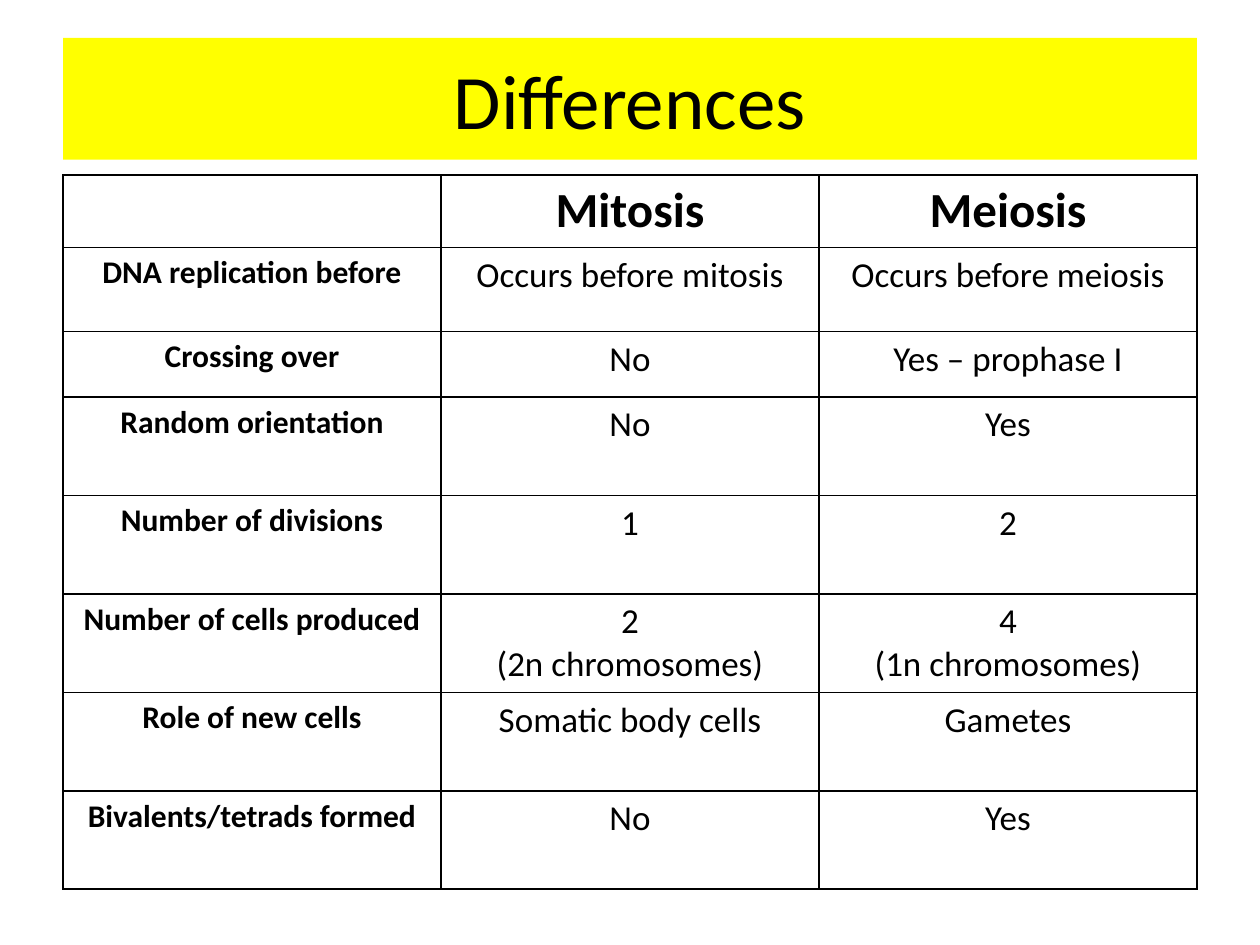
from lxml import etree
from pptx import Presentation
from pptx.dml.color import RGBColor
from pptx.enum.text import MSO_ANCHOR, PP_ALIGN
from pptx.oxml.ns import qn
from pptx.util import Pt

BLACK = RGBColor(0, 0, 0)
YELLOW = RGBColor(255, 255, 0)
FONT = "Calibri"
HEADING = {"size": Pt(28), "bold": True}
LABEL = {"size": Pt(18), "bold": True}
VALUE = {"size": Pt(20), "bold": False}

ROWS = [
    ("", "Mitosis", "Meiosis"),
    ("DNA replication before", "Occurs before mitosis", "Occurs before meiosis"),
    ("Crossing over", "No", "Yes – prophase I"),
    ("Random orientation", "No", "Yes"),
    ("Number of divisions", "1", "2"),
    ("Number of cells produced", "2\n(2n chromosomes)", "4\n(1n chromosomes)"),
    ("Role of new cells", "Somatic body cells", "Gametes"),
    ("Bivalents/tetrads formed", "No", "Yes"),
]
ROW_HEIGHTS = [37.5, 48, 37.5] + [56.25] * 5


def write_text(text_frame, text, font_format):
    """Fill a frame with centred paragraphs, one for each line of text."""
    text_frame.text = text
    for paragraph in text_frame.paragraphs:
        paragraph.alignment = PP_ALIGN.CENTER
        for run in paragraph.runs:
            for name, value in {"name": FONT, **font_format}.items():
                setattr(run.font, name, value)
            run.font.color.rgb = BLACK


def add_borders(cell):
    properties = cell._tc.get_or_add_tcPr()
    for index, side in enumerate(("lnL", "lnR", "lnT", "lnB")):
        line = etree.Element(qn(f"a:{side}"), w=str(Pt(1)))
        fill = etree.SubElement(line, qn("a:solidFill"))
        etree.SubElement(fill, qn("a:srgbClr"), val=str(BLACK))
        properties.insert(index, line)


def place_title(slide, left, top, width, height):
    title = slide.shapes.title
    box = {"left": left, "top": top, "width": width, "height": height}
    for name, value in box.items():
        setattr(title, name, Pt(value))
    title.fill.solid()
    title.fill.fore_color.rgb = YELLOW
    title.text_frame.vertical_anchor = MSO_ANCHOR.MIDDLE
    write_text(title.text_frame, "Differences", {"size": Pt(44), "bold": False})


def add_comparison_table(slide, left, top, width):
    column_count = len(ROWS[0])
    frame = slide.shapes.add_table(
        len(ROWS), column_count, Pt(left), Pt(top), Pt(width), Pt(sum(ROW_HEIGHTS)))
    table = frame.table
    table.first_row = table.horz_banding = False
    for column in table.columns:
        column.width = Pt(width / column_count)
    for row_index, (texts, height) in enumerate(zip(ROWS, ROW_HEIGHTS)):
        table.rows[row_index].height = Pt(height)
        for column_index, text in enumerate(texts):
            cell = table.cell(row_index, column_index)
            cell.fill.background()
            add_borders(cell)
            if row_index == 0:
                font_format = HEADING
            else:
                font_format = VALUE if column_index else LABEL
            write_text(cell.text_frame, text, font_format)


def main():
    presentation = Presentation()
    presentation.slide_width, presentation.slide_height = Pt(720), Pt(540)
    slide = presentation.slides.add_slide(presentation.slide_layouts[5])
    place_title(slide, 36, 21.6, 648, 69.6)
    add_comparison_table(slide, 36, 100, 648)
    presentation.save("out.pptx")


if __name__ == "__main__":
    main()
